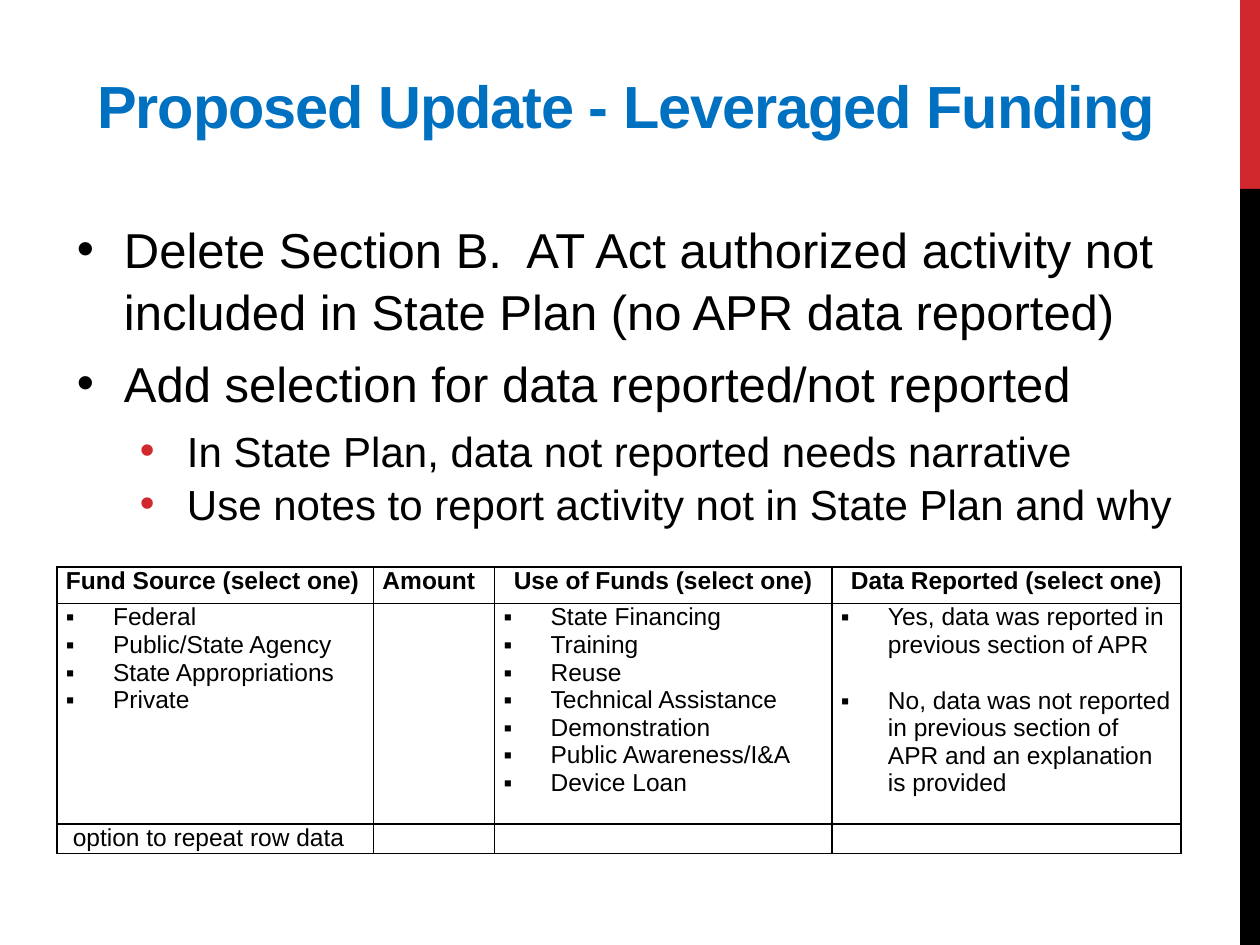
from lxml import etree
from pptx import Presentation
from pptx.dml.color import RGBColor
from pptx.enum import shapes, text
from pptx.oxml import ns
from pptx.util import Cm, Pt

RED, BLACK, BLUE = "D1282E", "000000", "0070C0"
HANGING = Cm(0.95)

COLUMN_WIDTHS = [6.38, 2.44, 6.8, 7.04]
ROW_HEIGHTS = [0.74, 4.44, 0.56]
HEADERS = ["Fund Source (select one)", "Amount",
           "Use of Funds (select one)", "Data Reported (select one)"]
CHOICES = [
    ["Federal", "Public/State Agency", "State Appropriations", "Private"],
    [],
    ["State Financing", "Training", "Reuse", "Technical Assistance",
     "Demonstration", "Public Awareness/I&A", "Device Loan"],
    ["Yes, data was reported in previous section of APR",
     "No, data was not reported in previous section of APR "
     "and an explanation is provided"],
]
BODY = [
    (0, "Delete Section B.  AT Act authorized activity not included in "
        "State Plan (no APR data reported)"),
    (0, "Add selection for data reported/not reported"),
    (1, "In State Plan, data not reported needs narrative"),
    (1, "Use notes to report activity not in State Plan and why"),
]


def color(hex_string):
    return RGBColor.from_string(hex_string)


def add_xml(parent, tag, **attributes):
    return etree.SubElement(parent, ns.qn(tag), attributes)


def set_font(paragraph, size, hex_string=BLACK, bold=False):
    font = paragraph.font
    font.name, font.size, font.bold = "Arial", Pt(size), bold
    font.color.rgb = color(hex_string)


def set_bullet(paragraph, character, left=HANGING, hex_string=BLACK):
    properties = paragraph._p.get_or_add_pPr()
    properties.set("marL", str(left))
    properties.set("indent", str(-HANGING))
    bullet_color = add_xml(properties, "a:buClr")
    add_xml(bullet_color, "a:srgbClr", val=hex_string)
    add_xml(properties, "a:buFont", typeface="Arial")
    add_xml(properties, "a:buChar", char=character)


def add_paragraphs(frame, lines):
    """Yield one paragraph per line, starting with the frame's first one."""
    for index, line in enumerate(lines):
        paragraph = frame.add_paragraph() if index else frame.paragraphs[0]
        paragraph.text = line
        yield paragraph


def add_band(slide, top, height, hex_string):
    shape = slide.shapes.add_shape(shapes.MSO_SHAPE.RECTANGLE,
                                   Cm(25), top, Cm(0.4), height)
    shape.shadow.inherit = False
    shape.fill.solid()
    shape.fill.fore_color.rgb = color(hex_string)
    shape.line.fill.background()


def add_text_frame(slide, left, top, width, height):
    frame = slide.shapes.add_textbox(Cm(left), Cm(top), Cm(width), Cm(height)).text_frame
    frame.word_wrap = True
    return frame


def add_title(slide, title):
    frame = add_text_frame(slide, 0.43, 0.84, 24.38, 2.11)
    frame.vertical_anchor = text.MSO_ANCHOR.BOTTOM
    paragraph = frame.paragraphs[0]
    run = paragraph.add_run()
    run.text = title
    run._r.get_or_add_rPr().set("spc", "-60")
    paragraph.alignment = text.PP_ALIGN.CENTER
    set_font(paragraph, 34, BLUE, bold=True)


def add_body(slide):
    frame = add_text_frame(slide, 1.3, 4.24, 22.66, 6.35)
    lines = [line for _, line in BODY]
    for (level, _), paragraph in zip(BODY, add_paragraphs(frame, lines)):
        paragraph.level = level
        paragraph.line_spacing = 1.05
        paragraph.space_after = Pt(0 if level else 6)
        set_bullet(paragraph, "•", HANGING + level * Cm(1.27),
                   RED if level else BLACK)
        set_font(paragraph, 24 if level else 28)


def set_borders(cell):
    properties = cell._tc.get_or_add_tcPr()
    for tag in ("a:lnL", "a:lnR", "a:lnT", "a:lnB"):
        line = add_xml(properties, tag, w=str(Pt(1)))
        fill = add_xml(line, "a:solidFill")
        add_xml(fill, "a:srgbClr", val=BLACK)


def fill_cell(cell, lines, bold=False, bullet=None, gap=0, centered=False):
    cell.margin_left = cell.margin_right = Cm(0.18)
    cell.margin_top = cell.margin_bottom = 0
    set_borders(cell)
    cell.fill.background()
    for paragraph in add_paragraphs(cell.text_frame, lines or [""]):
        if bullet and lines:
            set_bullet(paragraph, bullet)
            paragraph.space_after = Pt(gap)
        if centered:
            paragraph.alignment = text.PP_ALIGN.CENTER
        set_font(paragraph, 14, bold=bold)
        if not lines:
            add_xml(paragraph._p, "a:endParaRPr", sz="1400")


def add_funding_table(slide):
    table = slide.shapes.add_table(
        len(ROW_HEIGHTS), len(COLUMN_WIDTHS), Cm(1.15), Cm(11.43),
        Cm(sum(COLUMN_WIDTHS)), Cm(sum(ROW_HEIGHTS))).table
    table.first_row = table.horz_banding = False
    for column, width in zip(table.columns, COLUMN_WIDTHS):
        column.width = Cm(width)
    for row, height in zip(table.rows, ROW_HEIGHTS):
        row.height = Cm(height)
    for index, (header, choices) in enumerate(zip(HEADERS, CHOICES)):
        fill_cell(table.cell(0, index), [header], bold=True, centered=index > 1)
        # The two long answers stand one line apart
        fill_cell(table.cell(1, index), choices, bullet="▪",
                  gap=16 if index == 3 else 0)
        fill_cell(table.cell(2, index),
                  [] if index else [" option to repeat row data"])


def main():
    presentation = Presentation()
    presentation.slide_width, presentation.slide_height = Cm(25.4), Cm(19.05)
    slide = presentation.slides.add_slide(presentation.slide_layouts[6])
    # Side bands
    add_band(slide, 0, Cm(3.81), RED)
    add_band(slide, Cm(3.81), Cm(15.24), BLACK)
    # Content
    add_title(slide, "Proposed Update - Leveraged Funding")
    add_body(slide)
    add_funding_table(slide)
    presentation.save("out.pptx")


if __name__ == "__main__":
    main()
